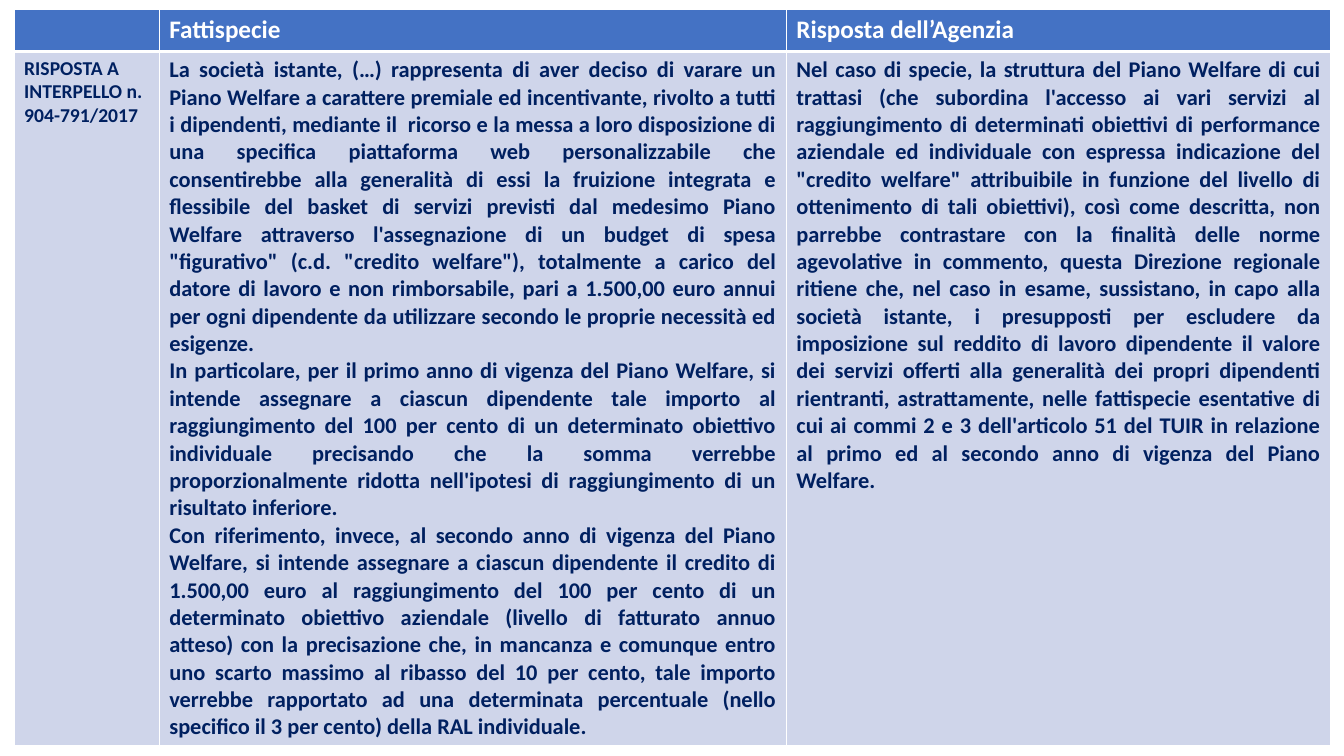
from lxml import etree
from pptx import Presentation
from pptx.dml.color import RGBColor
from pptx.enum.text import PP_ALIGN
from pptx.oxml.ns import qn
from pptx.util import Inches, Pt

LEFT = PP_ALIGN.LEFT
JUSTIFY = PP_ALIGN.JUSTIFY
COLORS = {"white": "FFFFFF", "header": "4472C4", "body": "CFD5EA", "navy": "002060"}

FACTS = [
    "La società istante, (…) rappresenta di aver deciso di varare un Piano Welfare a carattere "
    "premiale ed incentivante, rivolto a tutti i dipendenti, mediante il  ricorso e la messa a loro "
    "disposizione di una specifica piattaforma web personalizzabile che consentirebbe alla "
    "generalità di essi la fruizione integrata e flessibile del basket di servizi previsti dal "
    "medesimo Piano Welfare attraverso l'assegnazione di un budget di spesa \"figurativo\" (c.d. "
    "\"credito welfare\"), totalmente a carico del datore di lavoro e non rimborsabile, pari a "
    "1.500,00 euro annui per ogni dipendente da utilizzare secondo le proprie necessità ed esigenze.",
    "In particolare, per il primo anno di vigenza del Piano Welfare, si intende assegnare a ciascun "
    "dipendente tale importo al raggiungimento del 100 per cento di un determinato obiettivo "
    "individuale precisando che la somma verrebbe proporzionalmente ridotta nell'ipotesi di "
    "raggiungimento di un risultato inferiore.",
    "Con riferimento, invece, al secondo anno di vigenza del Piano Welfare, si intende assegnare a "
    "ciascun dipendente il credito di 1.500,00 euro al raggiungimento del 100 per cento di un "
    "determinato obiettivo aziendale (livello di fatturato annuo atteso) con la precisazione che, "
    "in mancanza e comunque entro uno scarto massimo al ribasso del 10 per cento, tale importo "
    "verrebbe rapportato ad una determinata percentuale (nello specifico il 3 per cento) della RAL "
    "individuale.",
]
ANSWER_CLAUSES = [
    "Nel caso di specie, la struttura del Piano Welfare di cui trattasi (che subordina l'accesso ai "
    "vari servizi al raggiungimento di determinati obiettivi di performance aziendale ed individuale "
    "con espressa indicazione del \"credito welfare\" attribuibile in funzione del livello di "
    "ottenimento di tali obiettivi), così come descritta, non parrebbe contrastare con la finalità "
    "delle norme agevolative in commento,",
    "questa Direzione regionale ritiene che, nel caso in esame, sussistano, in capo alla società "
    "istante, i presupposti per escludere da imposizione sul reddito di lavoro dipendente il valore "
    "dei servizi offerti alla generalità dei propri dipendenti rientranti, astrattamente, nelle "
    "fattispecie esentative di cui ai commi 2 e 3 dell'articolo 51 del TUIR in relazione al primo "
    "ed al secondo anno di vigenza del Piano Welfare.",
]
HEADINGS = [[], ["Fattispecie"], ["Risposta dell’Agenzia"]]
RULING = [["RISPOSTA A INTERPELLO n. 904-791/2017"], FACTS, [" ".join(ANSWER_CLAUSES)]]

COLUMN_WIDTHS = [1.44, 6.22, 5.4]
ROW_HEIGHTS = [0.42, 6.6]
ROW_STYLES = [
    {"fill": "header", "text": "white", "sizes": [18, 18, 18], "aligns": [LEFT] * 3,
     "borders": {"lnL": 1, "lnR": 1, "lnT": 1, "lnB": 3}},
    {"fill": "body", "text": "navy", "sizes": [14, 16, 16], "aligns": [LEFT, JUSTIFY, JUSTIFY],
     "borders": {"lnL": 1, "lnR": 1, "lnT": 3, "lnB": 1}},
]


def add_borders(cell, widths):
    properties = cell._tc.get_or_add_tcPr()
    for side, width in widths.items():
        line = etree.SubElement(properties, qn(f"a:{side}"), w=str(Pt(width)))
        fill = etree.SubElement(line, qn("a:solidFill"))
        etree.SubElement(fill, qn("a:srgbClr"), val=COLORS["white"])


deck = Presentation()
deck.slide_width = Inches(13.33)
deck.slide_height = Inches(7.5)
page = deck.slides.add_slide(deck.slide_layouts[6])

table = page.shapes.add_table(
    2, 3, Inches(0.14), Inches(0.09), Inches(sum(COLUMN_WIDTHS)), Inches(sum(ROW_HEIGHTS))
).table
for column, width in zip(table.columns, COLUMN_WIDTHS):
    column.width = Inches(width)

for row, height, texts, style in zip(table.rows, ROW_HEIGHTS, [HEADINGS, RULING], ROW_STYLES):
    row.height = Inches(height)
    for cell, lines, size, align in zip(row.cells, texts, style["sizes"], style["aligns"]):
        add_borders(cell, style["borders"])
        cell.fill.solid()
        cell.fill.fore_color.rgb = RGBColor.from_string(COLORS[style["fill"]])
        cell.text_frame.text = "\n".join(lines)
        for para in cell.text_frame.paragraphs:
            para.alignment = align
            para.font.name = "Calibri"
            para.font.size = Pt(size)
            para.font.bold = True
            para.font.color.rgb = RGBColor.from_string(COLORS[style["text"]])

deck.save("out.pptx")
